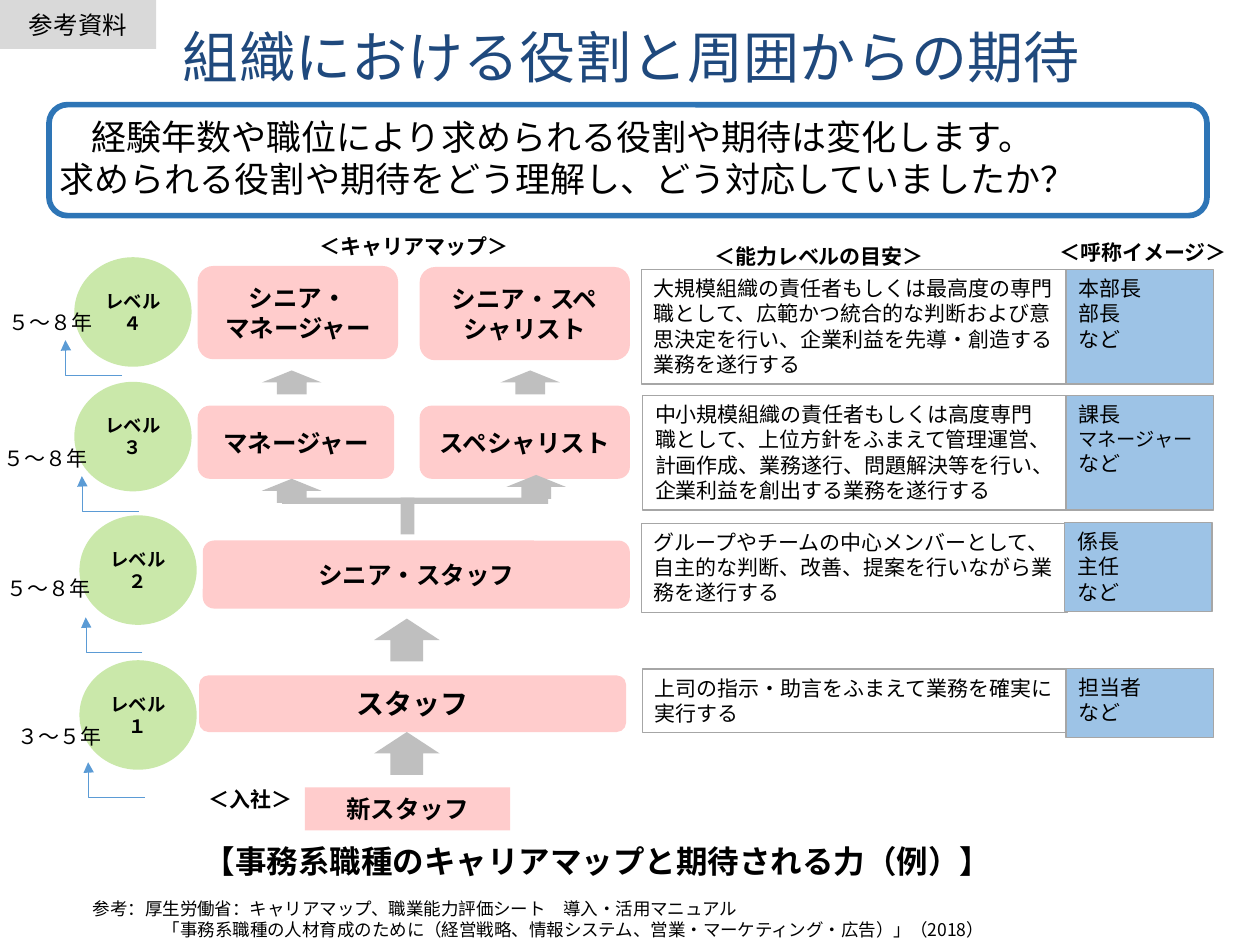
from lxml import etree
from pptx import Presentation
from pptx.dml.color import RGBColor
from pptx.enum.shapes import MSO_CONNECTOR, MSO_SHAPE
from pptx.enum.text import MSO_ANCHOR, MSO_AUTO_SIZE, PP_ALIGN
from pptx.oxml.ns import qn
from pptx.util import Pt

RECT, ROUND = MSO_SHAPE.RECTANGLE, MSO_SHAPE.ROUNDED_RECTANGLE
CIRCLE, ARROW = MSO_SHAPE.FLOWCHART_CONNECTOR, MSO_SHAPE.UP_ARROW
ELBOW = MSO_CONNECTOR.ELBOW
TOP, MIDDLE = MSO_ANCHOR.TOP, MSO_ANCHOR.MIDDLE
LEFT, CENTER = PP_ALIGN.LEFT, PP_ALIGN.CENTER
FIT, FIXED = MSO_AUTO_SIZE.SHAPE_TO_FIT_TEXT, MSO_AUTO_SIZE.NONE
JAPANESE = "Noto Sans CJK JP"
PINK, GREEN, GREY, BLUE = "FFCCCC", "CAE8AA", "BFBFBF", "9DC3E6"
EDGE = "A6A6A6"

deck = Presentation()
deck.slide_width, deck.slide_height = Pt(720), Pt(540)
slide = deck.slides.add_slide(deck.slide_layouts[5])
shapes = slide.shapes


def add_block(kind, place, fill, line=None, weight=0.75):
    block = shapes.add_shape(kind, *map(Pt, place))
    block.shadow.inherit = False
    block.fill.solid()
    block.fill.fore_color.rgb = RGBColor.from_string(fill)
    if line:
        block.line.color.rgb = RGBColor.from_string(line)
        block.line.width = Pt(weight)
    else:
        block.line.fill.background()
    return block


def write(box, lines, size, bold=False, align=LEFT, anchor=TOP, wrap=True,
          fit=FIXED, color="000000", font=JAPANESE, spacing=None):
    """Write lines of text; a line is a string or a (string, size) pair."""
    frame = box.text_frame
    frame.word_wrap, frame.auto_size, frame.vertical_anchor = wrap, fit, anchor
    for number, line in enumerate(lines):
        text, points = line if isinstance(line, tuple) else (line, size)
        para = frame.add_paragraph() if number else frame.paragraphs[0]
        para.alignment = align
        para.line_spacing = spacing
        span = para.add_run()
        span.text = text
        span.font.size, span.font.bold, span.font.name = Pt(points), bold, font
        span.font.color.rgb = RGBColor.from_string(color)
        east_asian = etree.SubElement(span.font._element, qn("a:ea"))
        east_asian.set("typeface", font)
    return frame


# Title
title = shapes.title
title.left, title.top, title.width, title.height = map(Pt, (-23, -4.3, 720, 77.8))
frame = write(title, ["組織における役割と周囲からの期待"], 32, align=CENTER,
              anchor=MIDDLE, color="1F497D", spacing=0.9)
frame.margin_left = Pt(55)

# Corner tag
tag = add_block(RECT, (0, 0, 89.3, 28), "D9D9D9")
write(tag, ["参考資料"], 14, align=CENTER, anchor=MIDDLE, font="Calibri")

# Lead message
message = add_block(ROUND, (28, 59.8, 661.7, 63.4), "FFFFFF", "2E75B6", 3.25)
frame = write(message, ["経験年数や職位により求められる役割や期待は変化します。",
                        "求められる役割や期待をどう理解し、どう対応していましたか？"], 20)
frame.margin_left = frame.margin_right = Pt(3)
frame.margin_top = frame.margin_bottom = Pt(3)
frame.paragraphs[0]._p.get_or_add_pPr().set("indent", str(Pt(18)))

# Career map roles
roles = [
    (["シニア・", "マネージャー"], 14, (113, 152, 114.5, 53.3)),
    (["シニア・スペシャリスト"], 14, (239.8, 152.6, 120.2, 53.3)),
    (["マネージャー"], 14, (113, 231.8, 112.3, 41.8)),
    (["スペシャリスト"], 14, (239.8, 231.8, 120.2, 41.8)),
    (["シニア・スタッフ"], 14, (115.9, 308.9, 244, 38.9)),
    (["スタッフ"], 16, (113.8, 385.9, 244, 32.4)),
]
for lines, size, place in roles:
    write(add_block(ROUND, place, PINK), lines, size, True, CENTER, MIDDLE)
newcomer = add_block(RECT, (174.2, 450, 117.4, 24.5), PINK)
write(newcomer, ["新スタッフ"], 14, True, CENTER, fit=FIT)

# Promotion arrows and the branch between them
for center, top in [(166.7, 211.7), (303, 211.7), (166.7, 273.6), (306.4, 271.4)]:
    add_block(ARROW, (center - 17, top, 34, 13.7), GREY)
for top in (353.5, 418.3):
    add_block(ARROW, (213.8, top, 37.4, 24.5), GREY)
add_block(RECT, (161.3, 284.4, 152, 3.6), GREY)
add_block(RECT, (228.9, 284.4, 8, 21), GREY)

# Levels: circle, years of service, step arrow, ability, job titles
levels = [
    ("４", (42.5, 147), "５～８年", (-2, 173.5), (69.8, 214.6),
     (366.5, 154, 243.4, 65.5),
     "大規模組織の責任者もしくは最高度の専門職として、広範かつ統合的な判断および意思決定を行い、企業利益を先導・創造する業務を遂行する",
     (609.1, 154, 84.2, 65.5), ["本部長", "部長", "など"]),
    ("３", (42.5, 218.2), "５～８年", (-5, 251.3), (79.2, 292.3),
     (367.2, 226, 242, 65.5),
     "中小規模組織の責任者もしくは高度専門職として、上位方針をふまえて管理運営、計画作成、業務遂行、問題解決等を行い、企業利益を創出する業務を遂行する",
     (609.1, 226, 84.2, 65.5), ["課長", ("マネージャー", 11), "など"]),
    ("２", (45.4, 294.5), "５～８年", (-3.6, 325.4), (81.4, 373),
     (366.5, 299, 243.4, 51),
     "グループやチームの中心メンバーとして、自主的な判断、改善、提案を行いながら業務を遂行する",
     (608.4, 298.6, 84.2, 51), ["係長", "主任", "など"]),
    ("１", (45.4, 377.3), "３～５年", (2.9, 409.7), (82.8, 455.8),
     (367.2, 382.3, 242.6, 36.5),
     "上司の指示・助言をふまえて業務を確実に実行する",
     (609.1, 382, 84.2, 39.6), ["担当者", "など"]),
]
for (level, circle_at, years, years_at, (start_x, start_y),
     ability_at, ability, names_at, names) in levels:
    circle = add_block(CIRCLE, (*circle_at, 67, 62.6), GREEN)
    write(circle, ["レベル" + level], 10.5, True, CENTER, MIDDLE)
    box = shapes.add_textbox(*map(Pt, (*years_at, 63.4, 21.6)))
    write(box, [years], 12, wrap=False, fit=FIT)

    step = shapes.add_connector(ELBOW, Pt(start_x), Pt(start_y),
                                Pt(start_x - 32.4), Pt(start_y - 20.2))
    step.line.color.rgb = RGBColor.from_string("5B9BD5")
    step.line.width = Pt(0.5)
    properties = step._element.spPr
    bend = etree.SubElement(properties.find(".//" + qn("a:avLst")), qn("a:gd"))
    bend.set("name", "adj1")
    bend.set("fmla", "val 99200")
    etree.SubElement(properties.find(qn("a:ln")), qn("a:tailEnd")).set("type", "triangle")
    etree.SubElement(properties, qn("a:effectLst"))

    write(add_block(RECT, ability_at, "FFFFFF", EDGE), [ability], 12, fit=FIT)
    write(add_block(RECT, names_at, BLUE, EDGE), names, 12, fit=FIT)

# Column headings and entry label
headings = [
    ("＜能力レベルの目安＞", (401, 135.4, 135.4, 21.6)),
    ("＜呼称イメージ＞", (598.3, 133.2, 111.6, 21.6)),
    ("＜入社＞", (112.3, 445.7, 63.4, 21.6)),
]
for text, place in headings:
    write(shapes.add_textbox(*map(Pt, place)), [text], 12, True, wrap=False, fit=FIT)
box = shapes.add_textbox(*map(Pt, (143.3, 126, 164.2, 26.6)))
frame = write(box, ["＜キャリアマップ＞"], 12, True)
frame.margin_left, frame.margin_top = Pt(39.2), Pt(7.5)

# Caption
box = shapes.add_textbox(*map(Pt, (-36.7, 476, 720, 34.6)))
frame = write(box, ["【事務系職種のキャリアマップと期待される力（例）】"], 18, True,
              CENTER, MIDDLE, spacing=0.9)
frame.margin_left = Pt(43.2)

# Reference
box = shapes.add_textbox(*map(Pt, (46, 509.8, 705, 31.7)))
frame = write(box, ["参考：厚生労働省：キャリアマップ、職業能力評価シート　導入・活用マニュアル",
                    "「事務系職種の人材育成のために（経営戦略、情報システム、営業・マーケティング・広告）」（2018）"],
              10, fit=FIT)
frame.paragraphs[1]._p.get_or_add_pPr().set("marL", str(Pt(40)))

deck.save("out.pptx")
